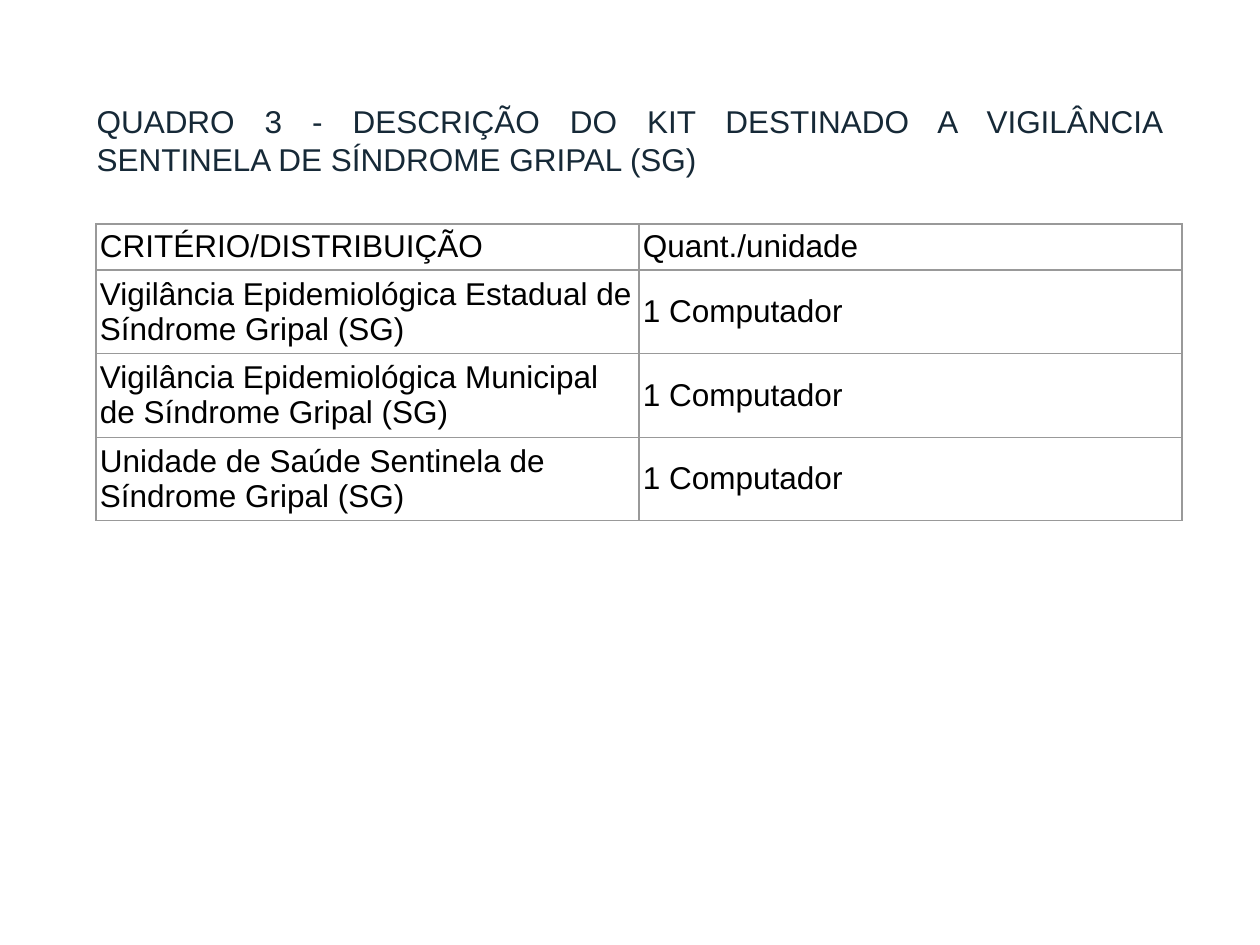
import lxml.etree
import pptx
import pptx.dml.color
import pptx.enum.text
import pptx.oxml.ns
import pptx.util

EMU_PER_PX = 914400 / 126
COLORS = {"title": "162937", "text": "000000", "border": "999999", "cell": "FFFFFF"}
ROWS = [
    ("CRITÉRIO/DISTRIBUIÇÃO", "Quant./unidade"),
    ("Vigilância Epidemiológica Estadual de Síndrome Gripal (SG)", "1 Computador"),
    ("Vigilância Epidemiológica Municipal de Síndrome Gripal (SG)", "1 Computador"),
    ("Unidade de Saúde Sentinela de Síndrome Gripal (SG)", "1 Computador"),
]


def px(length):
    """Turn pixels into EMU."""
    return pptx.util.Emu(round(length * EMU_PER_PX))


def color(name):
    """Look up a named colour."""
    return pptx.dml.color.RGBColor.from_string(COLORS[name])


def style_paragraph(para, color_name):
    """Set the shared font of a paragraph."""
    para.font.name = "Arial"
    para.font.size = pptx.util.Pt(18)
    para.font.bold = False
    para.font.color.rgb = color(color_name)


def add_title(page, text):
    """Place the justified heading in the title placeholder."""
    title = page.shapes.title
    title.left, title.top, title.width, title.height = px(84), px(96), px(1091), px(90)
    frame = title.text_frame
    frame.text = text
    frame.word_wrap = True
    frame.auto_size = pptx.enum.text.MSO_AUTO_SIZE.SHAPE_TO_FIT_TEXT
    frame.vertical_anchor = pptx.enum.text.MSO_ANCHOR.TOP
    para = frame.paragraphs[0]
    para.alignment = pptx.enum.text.PP_ALIGN.JUSTIFY
    style_paragraph(para, "title")


def add_borders(cell):
    """Draw a thin line on every side of a cell."""
    properties = cell._tc.get_or_add_tcPr()
    qn = pptx.oxml.ns.qn
    for side in ("lnL", "lnR", "lnT", "lnB"):
        line = lxml.etree.SubElement(properties, qn(f"a:{side}"), w=str(pptx.util.Pt(0.75)))
        fill = lxml.etree.SubElement(line, qn("a:solidFill"))
        lxml.etree.SubElement(fill, qn("a:srgbClr"), val=COLORS["border"])


def fill_cell(cell, text):
    """Write and format one table cell."""
    cell.text = text
    cell.margin_left = cell.margin_right = cell.margin_top = cell.margin_bottom = px(4)
    cell.vertical_anchor = pptx.enum.text.MSO_ANCHOR.MIDDLE
    add_borders(cell)
    cell.fill.solid()
    cell.fill.fore_color.rgb = color("cell")
    style_paragraph(cell.text_frame.paragraphs[0], "text")


def add_kit_table(page, rows):
    """Add the table of kits per unit."""
    heights = [46] + [83] * (len(rows) - 1)
    frame = page.shapes.add_table(
        len(rows), len(rows[0]), px(96), px(224), px(1086), px(sum(heights))
    )
    table = frame.table
    table.first_row = table.horz_banding = False
    for row_index, (height, texts) in enumerate(zip(heights, rows)):
        table.rows[row_index].height = px(height)
        for column_index, text in enumerate(texts):
            fill_cell(table.cell(row_index, column_index), text)


def main():
    """Build the slide and save it."""
    deck = pptx.Presentation()
    deck.slide_width, deck.slide_height = px(1260), px(945)
    page = deck.slides.add_slide(deck.slide_layouts.get_by_name("Title Only"))
    add_title(
        page,
        "QUADRO 3 - DESCRIÇÃO DO KIT DESTINADO A VIGILÂNCIA "
        "SENTINELA DE SÍNDROME GRIPAL (SG)",
    )
    add_kit_table(page, ROWS)
    deck.save("out.pptx")


if __name__ == "__main__":
    main()
